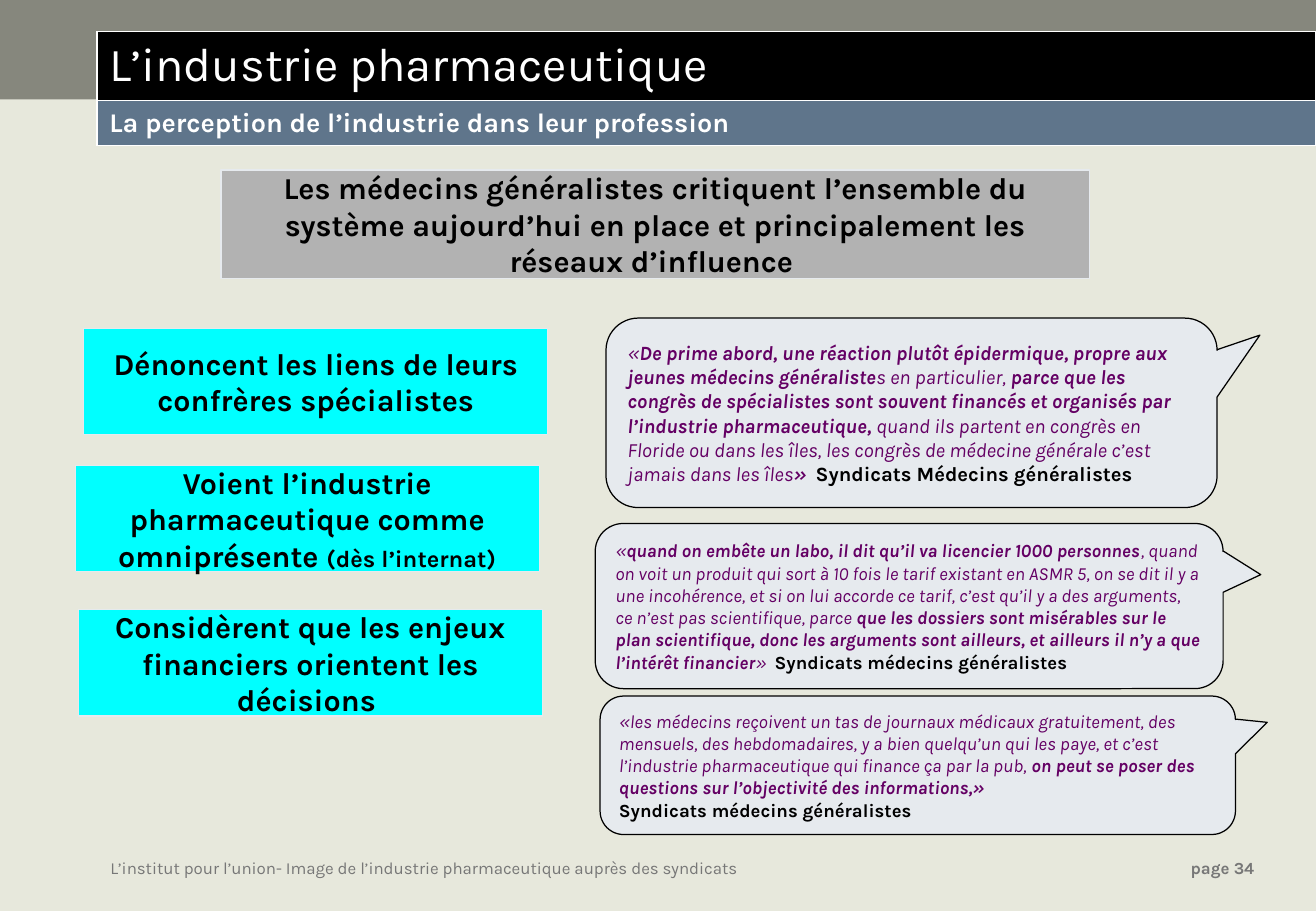
"""Build the slide on how general practitioners perceive the pharmaceutical industry."""
import pptx
import pptx.dml.color
import pptx.enum.shapes
import pptx.enum.text
import pptx.oxml
import pptx.oxml.ns
import pptx.util

Pt = pptx.util.Pt
SHAPES = pptx.enum.shapes.MSO_SHAPE
ALIGN = pptx.enum.text.PP_ALIGN
MIDDLE = pptx.enum.text.MSO_ANCHOR.MIDDLE

FONT = "Karla"
BLACK, WHITE = "000000", "FFFFFF"
BACKGROUND, BAND, SUBTITLE = "E7E8DC", "86877D", "5F758B"
PALE, GREY, CYAN = "E6EAEE", "B2B2B2", "00FFFF"
PURPLE, FOOTER = "640064", "777777"

HEADINGS = [
    ("L’industrie pharmaceutique", 28, False, BLACK, 41),
    ("La perception de l’industrie dans leur profession", 16, True, SUBTITLE, 26.6),
]

STATEMENTS = [
    ((131, 100.8, 514.8, 64.1), GREY, [
        ("Les médecins généralistes critiquent l’ensemble du système aujourd’hui "
         "en place et principalement les réseaux d’influence ", 18)]),
    ((49.7, 194.6, 275, 63), CYAN, [
        ("Dénoncent les liens de leurs confrères spécialistes", 18)]),
    ((44.6, 275.8, 275, 63), CYAN, [
        ("Voient l’industrie pharmaceutique comme omniprésente ", 18),
        ("(dès l’internat)", 14)]),
    ((46.4, 361.4, 275, 63), CYAN, [
        ("Considèrent que les enjeux financiers orientent les décisions ", 18)]),
]

QUOTES = [
    ((359.2, 188.6, 362.2, 112.3), (0.57, -0.41), 12, [[
        ("«", "plain"),
        ("De prime abord, une réaction plutôt épidermique, propre aux jeunes "
         "médecins généraliste", "strong"),
        ("s en particulier, ", "plain"),
        ("parce que les congrès de spécialistes sont souvent financés et organisés "
         "par l’industrie pharmaceutique, ", "strong"),
        ("quand ils partent en congrès en Floride ou dans les îles, les congrès de "
         "médecine générale c’est jamais dans les îles", "plain"),
        ("»  ", "strong"),
        ("Syndicats Médecins généralistes", "source")]]),
    ((352.8, 310.3, 372.2, 97.9), (0.56, -0.19), 11, [[
        ("«", "plain"),
        ("quand on embête un labo, il dit qu’il va licencier 1000 personnes", "strong"),
        (", quand on voit un produit qui sort à 10 fois le tarif existant en ASMR 5, "
         "on se dit il y a une incohérence, et si on lui accorde ce tarif, c’est "
         "qu’il y a des arguments, ce n’est pas scientifique, parce ", "plain"),
        ("que les dossiers sont misérables sur le plan scientifique, donc les "
         "arguments sont ailleurs, et ailleurs il n’y a que l’intérêt financier",
         "strong"),
        ("»  ", "plain"),
        ("Syndicats médecins généralistes", "source")]]),
    ((355.7, 412.6, 376.6, 82.1), (0.55, -0.31), 11, [
        [("«les médecins reçoivent un tas de journaux médicaux gratuitement, des "
          "mensuels, des hebdomadaires, y a bien quelqu’un qui les paye, et c’est "
          "l’industrie pharmaceutique qui finance ça par la pub, ", "plain"),
         ("on peut se poser des questions sur l’objectivité des informations,»",
          "strong")],
        [("Syndicats médecins généralistes", "source")]]),
]


def color(value):
    """Turn a hex string into a colour."""
    return pptx.dml.color.RGBColor.from_string(value)


def set_font(font, size, value, bold=None, italic=None):
    """Set the typeface, size, colour and style of a font."""
    font.name = FONT
    font.size = Pt(size)
    font.color.rgb = color(value)
    font.bold = bold
    font.italic = italic


def add_box(slide, kind, box, fill, line=None):
    """Add a flat filled shape, outlined when a line colour is given."""
    shape = slide.shapes.add_shape(kind, *map(Pt, box))
    shape.shadow.inherit = False
    shape.fill.solid()
    shape.fill.fore_color.rgb = color(fill)
    if line:
        shape.line.color.rgb = color(line)
        shape.line.width = Pt(0.75)
    else:
        shape.line.fill.background()
    shape.text_frame.word_wrap = True
    shape.text_frame.vertical_anchor = MIDDLE
    return shape


def add_statement(slide, box, fill, parts):
    """Add a rectangle holding a centred bold statement."""
    shape = add_box(slide, SHAPES.RECTANGLE, box, fill, PALE)
    paragraph = shape.text_frame.paragraphs[0]
    paragraph.alignment = ALIGN.CENTER
    set_font(paragraph.font, parts[0][1], BLACK, bold=True)
    for text, size in parts:
        run = paragraph.add_run()
        run.text = text
        run.font.size = Pt(size)


def add_quote(slide, box, tip, size, paragraphs):
    """Add a rounded callout holding an italic quote and its source."""
    shape = add_box(slide, SHAPES.ROUNDED_RECTANGULAR_CALLOUT, box, PALE, BLACK)
    for index, value in enumerate((*tip, 0.17)):
        shape.adjustments[index] = value
    frame = shape.text_frame
    for index, parts in enumerate(paragraphs):
        paragraph = frame.add_paragraph() if index else frame.paragraphs[0]
        paragraph.alignment = ALIGN.LEFT
        set_font(paragraph.font, size, PURPLE, italic=True)
        for text, style in parts:
            run = paragraph.add_run()
            run.text = text
            run.font.bold = style != "plain"
            if style == "source":
                run.font.italic = False
                run.font.color.rgb = color(BLACK)


def add_heading_table(slide):
    """Add the one-column table with the title and the subtitle."""
    height = sum(heading[-1] for heading in HEADINGS)
    frame = slide.shapes.add_table(len(HEADINGS), 1, Pt(57.6), Pt(18.7), Pt(722.4), Pt(height))
    for index, (text, size, bold, fill, row_height) in enumerate(HEADINGS):
        frame.table.rows[index].height = Pt(row_height)
        cell = frame.table.cell(index, 0)
        cell.fill.solid()
        cell.fill.fore_color.rgb = color(fill)
        cell.vertical_anchor = MIDDLE
        cell.text = text
        set_font(cell.text_frame.paragraphs[0].font, size, WHITE, bold=bold)


def add_footer(slide, text, page):
    """Add the footer line with the page number on a right tab."""
    shape = slide.shapes.add_textbox(Pt(58.3), Pt(504.7), Pt(721.4), Pt(19.4))
    shape.text_frame.word_wrap = True
    paragraph = shape.text_frame.paragraphs[0]
    set_font(paragraph.font, 10, FOOTER)
    for content, bold in ((text + "\t", False), (page, True)):
        run = paragraph.add_run()
        run.text = content
        run.font.bold = bold
    tabs = pptx.oxml.parse_xml(
        f'<a:tabLst {pptx.oxml.ns.nsdecls("a")}><a:tab pos="{Pt(678)}" algn="r"/></a:tabLst>')
    paragraph._p.get_or_add_pPr().insert(0, tabs)


def main():
    """Build and save the presentation."""
    presentation = pptx.Presentation()
    presentation.slide_width = Pt(780)
    presentation.slide_height = Pt(540)
    slide = presentation.slides.add_slide(presentation.slide_layouts[6])
    slide.background.fill.solid()
    slide.background.fill.fore_color.rgb = color(BACKGROUND)
    add_box(slide, SHAPES.RECTANGLE, (0, 0, 780, 59), BAND)
    add_footer(slide, "L’institut pour l’union- Image de l’industrie pharmaceutique "
               "auprès des syndicats", "page 34")
    add_heading_table(slide)
    for statement in STATEMENTS:
        add_statement(slide, *statement)
    for quote in QUOTES:
        add_quote(slide, *quote)
    presentation.save("out.pptx")


if __name__ == "__main__":
    main()
